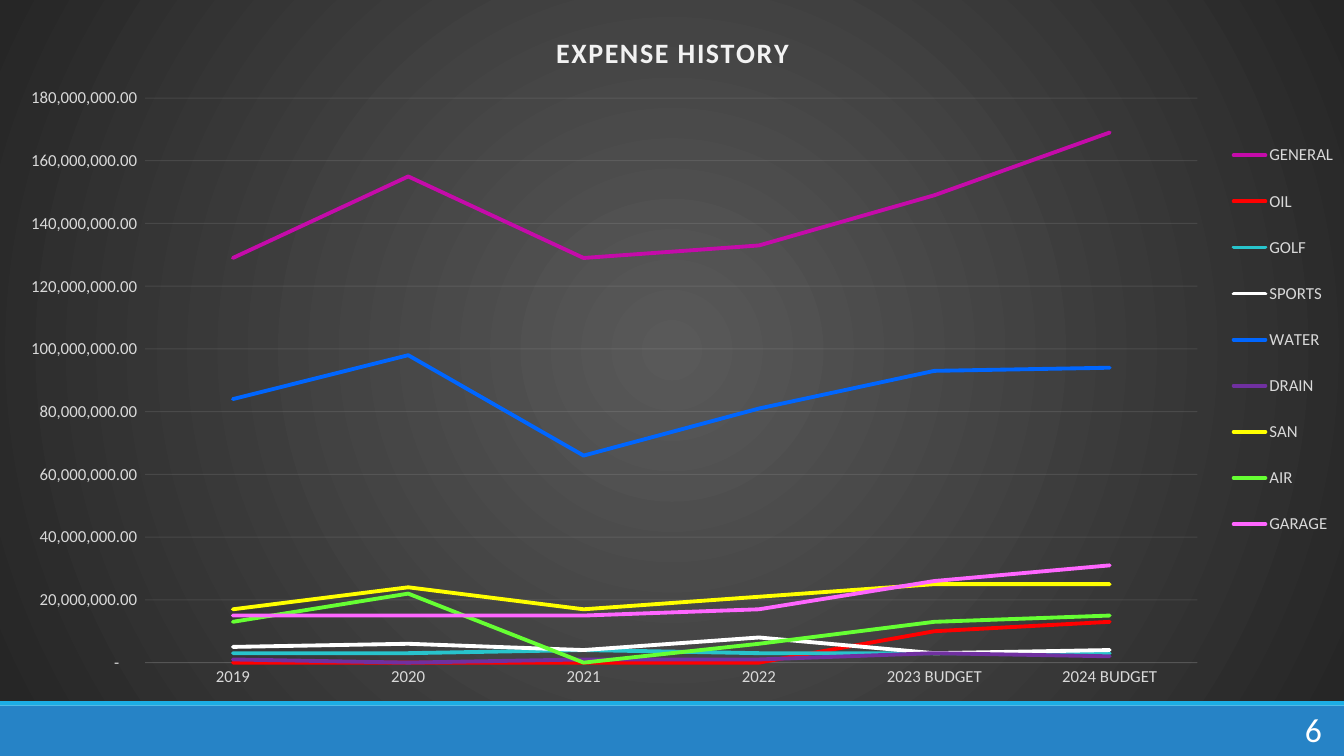
import pptx
import pptx.util
import pptx.dml.color
import pptx.chart.data
import pptx.enum.chart
import pptx.enum.shapes
import pptx.enum.text
import pptx.oxml
import pptx.oxml.ns

WIDE, HIGH = 13.33, 7.5
NS = pptx.oxml.ns.nsdecls("c", "a")
qn = pptx.oxml.ns.qn

YEARS = ["2019", "2020", "2021", "2022", "2023 BUDGET", "2024 BUDGET"]
FUNDS = [
    ("GENERAL", "C50BAA", (129, 155, 129, 133, 149, 169)),
    ("OIL", "FF0000", (0, 0, 0, 0, 10, 13)),
    ("GOLF", "28C4CC", (3, 3, 4, 3, 3, 3)),
    ("SPORTS", "FFFFFF", (5, 6, 4, 8, 3, 4)),
    ("WATER", "0066FF", (84, 98, 66, 81, 93, 94)),
    ("DRAIN", "7030A0", (1, 0, 1, 1, 3, 2)),
    ("SAN", "FFFF00", (17, 24, 17, 21, 25, 25)),
    ("AIR", "66FF33", (13, 22, 0, 6, 13, 15)),
    ("GARAGE", "FF66FF", (15, 15, 15, 17, 26, 31)),
]
MONEY = '_(* #,##0.00_);_(* \\(#,##0.00\\);_(* "-"??_);_(@_)'


def tint(code):
    return pptx.dml.color.RGBColor.from_string(code)


class Deck:
    """Holds the style and the current slide, and draws each kind of element."""

    face, pale, soft = "Calibri", "F2F2F2", "D9D9D9"

    def __init__(self):
        self.file = pptx.Presentation()
        self.file.slide_width = pptx.util.Inches(WIDE)
        self.file.slide_height = pptx.util.Inches(HIGH)
        self.slide = self.file.slides.add_slide(self.file.slide_layouts[6])

    def box(self, left, top, width, height):
        sizes = (left * WIDE, top * HIGH, width * WIDE, height * HIGH)
        return [pptx.util.Inches(size) for size in sizes]

    def font(self, font, size, code, bold=False):
        font.name, font.size, font.bold = self.face, pptx.util.Pt(size), bold
        font.color.rgb = tint(code)

    def band(self, share, code):
        kind = pptx.enum.shapes.MSO_SHAPE.RECTANGLE
        shape = self.slide.shapes.add_shape(kind, *self.box(*share))
        shape.shadow.inherit = False
        shape.fill.solid()
        shape.fill.fore_color.rgb = tint(code)
        shape.line.fill.background()

    def text(self, share, words, size, code):
        frame = self.slide.shapes.add_textbox(*self.box(*share)).text_frame
        frame.word_wrap = True
        frame.vertical_anchor = pptx.enum.text.MSO_ANCHOR.MIDDLE
        para = frame.paragraphs[0]
        para.alignment = pptx.enum.text.PP_ALIGN.RIGHT
        run = para.add_run()
        run.text = words
        self.font(run.font, size, code)

    def place(self, after, x, y, w=None, h=None, inner=False):
        parent = after.getparent()
        for old in parent.findall(qn("c:layout")):
            parent.remove(old)
        parts = '<c:layoutTarget val="inner"/>' if inner else ""
        parts += '<c:xMode val="edge"/><c:yMode val="edge"/>'
        for tag, size in zip("xywh", (x, y, w, h)):
            parts += f'<c:{tag} val="{size}"/>' if size else ""
        after.addprevious(pptx.oxml.parse_xml(
            f"<c:layout {NS}><c:manualLayout>{parts}</c:manualLayout></c:layout>"))

    def faint(self, line):
        line.width = pptx.util.Pt(0.75)
        line.color.rgb = tint(self.pale)
        for color in line.fill._xPr.iter(qn("a:srgbClr")):
            color.append(pptx.oxml.parse_xml(f'<a:alpha {NS} val="10000"/>'))

    def glow(self, chart, core, edge):
        stops = "".join(f'<a:gs pos="{pos}"><a:srgbClr val="{code}"/></a:gs>'
                        for pos, code in ((0, core), (100000, edge)))
        chart.element.find(qn("c:chart")).addnext(pptx.oxml.parse_xml(
            f'<c:spPr {NS}><a:gradFill><a:gsLst>{stops}</a:gsLst>'
            '<a:path path="circle"><a:fillToRect l="50000" t="50000" r="50000" '
            'b="50000"/></a:path></a:gradFill><a:ln><a:noFill/></a:ln></c:spPr>'))

    def axes(self, chart):
        for axis in (chart.category_axis, chart.value_axis):
            axis.major_tick_mark = pptx.enum.chart.XL_TICK_MARK.NONE
            axis.minor_tick_mark = pptx.enum.chart.XL_TICK_MARK.NONE
            self.font(axis.tick_labels.font, 12, self.soft)
        self.faint(chart.category_axis.format.line)
        scale = chart.value_axis
        scale.minimum_scale, scale.maximum_scale = 0, 180_000_000
        scale.major_unit = 20_000_000
        scale.format.line.fill.background()
        scale.has_major_gridlines = True
        self.faint(scale.major_gridlines.format.line)
        scale.tick_labels.number_format = MONEY
        scale.tick_labels.number_format_is_linked = False

    def head(self, chart, words):
        chart.has_title = True
        run = chart.chart_title.text_frame.paragraphs[0].add_run()
        run.text = words
        self.font(run.font, 20, self.pale, True)
        run.font._element.set("spc", "100")
        title = chart.element.find(".//" + qn("c:title"))
        self.place(title.find(qn("c:overlay")), 0.41, 0.04)

    def key(self, chart):
        chart.has_legend = True
        chart.legend.position = pptx.enum.chart.XL_LEGEND_POSITION.RIGHT
        chart.legend.include_in_layout = False
        self.font(chart.legend.font, 12, self.soft)
        legend = chart.element.find(".//" + qn("c:legend"))
        self.place(legend.find(qn("c:overlay")), 0.91, 0.17, 0.09, 0.63)

    def lines(self, share, words, cats, rows):
        data = pptx.chart.data.CategoryChartData(number_format=MONEY)
        data.categories = cats
        for name, _, vals in rows:
            data.add_series(name, [val * 1_000_000 for val in vals])
        kind = pptx.enum.chart.XL_CHART_TYPE.LINE
        chart = self.slide.shapes.add_chart(kind, *self.box(*share), data).chart
        self.font(chart.font, 10, "000000")
        self.glow(chart, "595959", "262626")
        self.head(chart, words)
        self.axes(chart)
        self.key(chart)
        plot = chart.plots[0]
        plot.vary_by_categories = False
        for line, (_, code, _) in zip(plot.series, rows):
            line.smooth = False
            line.marker.style = pptx.enum.chart.XL_MARKER_STYLE.NONE
            line.format.line.width = pptx.util.Pt(2.75)
            line.format.line.color.rgb = tint(code)
            line.format.line.fill._xPr.set("cap", "rnd")
        body = chart.element.find(".//" + qn("c:lineChart"))
        self.place(body, 0.108, 0.14, 0.783, 0.806, inner=True)


def main():
    deck = Deck()
    foot = 7 / HIGH
    deck.band((0, foot, 1, 1 - foot), "2683C6")
    deck.band((0, foot - 0.01, 1, 0.01), "1CADE4")
    deck.lines((0, 0, 1, 6.95 / HIGH), "EXPENSE HISTORY", YEARS, FUNDS)
    deck.text((11.78 / WIDE, 7.03 / HIGH, 1.43 / WIDE, 0.4 / HIGH),
              "6", 24, "FFFFFF")
    deck.file.save("out.pptx")


if __name__ == "__main__":
    main()
